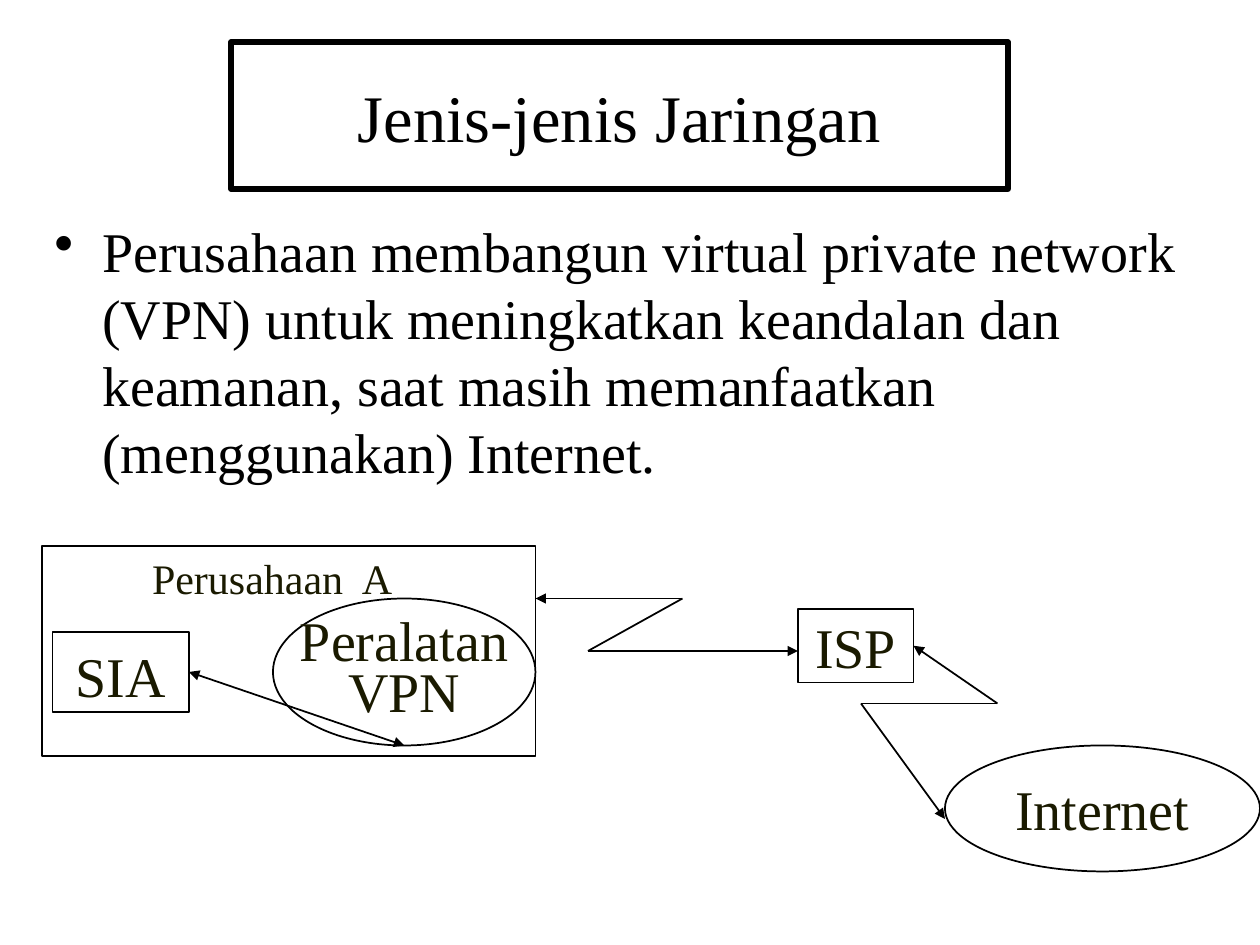
from itertools import pairwise

from lxml.etree import SubElement
from pptx import Presentation
from pptx.dml.color import RGBColor
from pptx.enum.shapes import MSO_CONNECTOR, MSO_SHAPE
from pptx.enum.text import MSO_ANCHOR, PP_ALIGN
from pptx.oxml.ns import qn
from pptx.util import Inches, Pt

BLACK, WHITE, OLIVE = "000000", "FFFFFF", "1A1A00"
RECT, OVAL = MSO_SHAPE.RECTANGLE, MSO_SHAPE.OVAL
RIGHT, OVAL_LEFT = 3, 2


def paint(code):
    return RGBColor.from_string(code)


def cells(*counts):
    """Lengths in grid cells, twelve to the inch."""
    return [Inches(n / 12) for n in counts]


class Board:
    font = "Times New Roman"

    def __init__(self, deck):
        self.slide = deck.slides.add_slide(deck.slide_layouts[6])

    def label(self, shape, text, size=32, color=OLIVE, align=PP_ALIGN.CENTER,
              space=1.0, **frame):
        body = shape.text_frame
        setup = {"word_wrap": False, "vertical_anchor": MSO_ANCHOR.MIDDLE}
        for name, value in (setup | frame).items():
            setattr(body, name, value)
        body.text = text
        for para in body.paragraphs:
            para.alignment, para.line_spacing = align, space
            look = {"name": self.font, "size": Pt(size)}
            for name, value in look.items():
                setattr(para.runs[0].font, name, value)
            para.runs[0].font.color.rgb = paint(color)
        return body

    def node(self, kind, box, text="", width=1, **style):
        shape = self.slide.shapes.add_shape(kind, *cells(*box))
        shape.shadow.inherit = False
        shape.fill.solid()
        shape.fill.fore_color.rgb = paint(WHITE)
        shape.line.color.rgb = paint(BLACK)
        shape.line.width = Pt(width)
        if text:
            self.label(shape, text, **style)
        return shape

    def note(self, box, text, **style):
        shape = self.slide.shapes.add_textbox(*cells(*box))
        return self.label(shape, text, align=PP_ALIGN.LEFT,
                          vertical_anchor=MSO_ANCHOR.TOP, **style)

    def bullet(self, box, text, **style):
        body = self.note(box, text, word_wrap=True, **style)
        props = body.paragraphs[0]._p.get_or_add_pPr()
        indent = Inches(0.38)
        props.set("marL", str(indent))
        props.set("indent", str(-indent))
        SubElement(props, qn("a:buChar"), char="•")

    def link(self, *points):
        """Join the points with straight lines, arrowheads at both far ends."""
        lines = []
        for start, end in pairwise(points):
            line = self.slide.shapes.add_connector(
                MSO_CONNECTOR.STRAIGHT, *cells(*start, *end))
            line.line.color.rgb = paint(BLACK)
            line.line.width = Pt(1)
            stroke = line.line._get_or_add_ln()
            for tag, there in (("a:headEnd", start == points[0]),
                               ("a:tailEnd", end == points[-1])):
                if there:
                    SubElement(stroke, qn(tag), type="triangle")
            SubElement(line._element.spPr, qn("a:effectLst"))
            lines.append(line)
        return lines


def main():
    deck = Presentation()
    deck.slide_width, deck.slide_height = cells(120, 90)
    board = Board(deck)

    board.node(RECT, (22, 4, 74, 14), "Jenis-jenis Jaringan", width=3,
               size=38, color=BLACK)
    board.bullet((4, 20, 116, 59),
                 "Perusahaan membangun virtual private network (VPN) untuk "
                 "meningkatkan keandalan dan keamanan, saat masih "
                 "memanfaatkan (menggunakan) Internet.", color=BLACK)

    board.node(RECT, (4, 52, 47, 20))
    board.note((13.3, 52, 28, 6), "Perusahaan  A", size=24)
    sia = board.node(RECT, (5, 60.2, 13, 7.6), "SIA",
                     margin_top=Inches(0.08), margin_bottom=Inches(0.03))
    vpn = board.node(OVAL, (26, 57, 25, 14), "Peralatan\nVPN", space=0.75)
    isp = board.node(RECT, (76, 58, 11, 7), "ISP")
    board.node(OVAL, (90, 71, 30, 12), "Internet")

    local, = board.link((18, 64), (26, 64))
    local.begin_connect(sia, RIGHT)
    local.end_connect(vpn, OVAL_LEFT)
    board.link((51, 57), (65, 57), (56, 62), (76, 62))
    first, *_ = board.link((87, 61.5), (95, 67), (82, 67), (90, 78))
    first.begin_connect(isp, RIGHT)

    deck.save("out.pptx")


if __name__ == "__main__":
    main()
